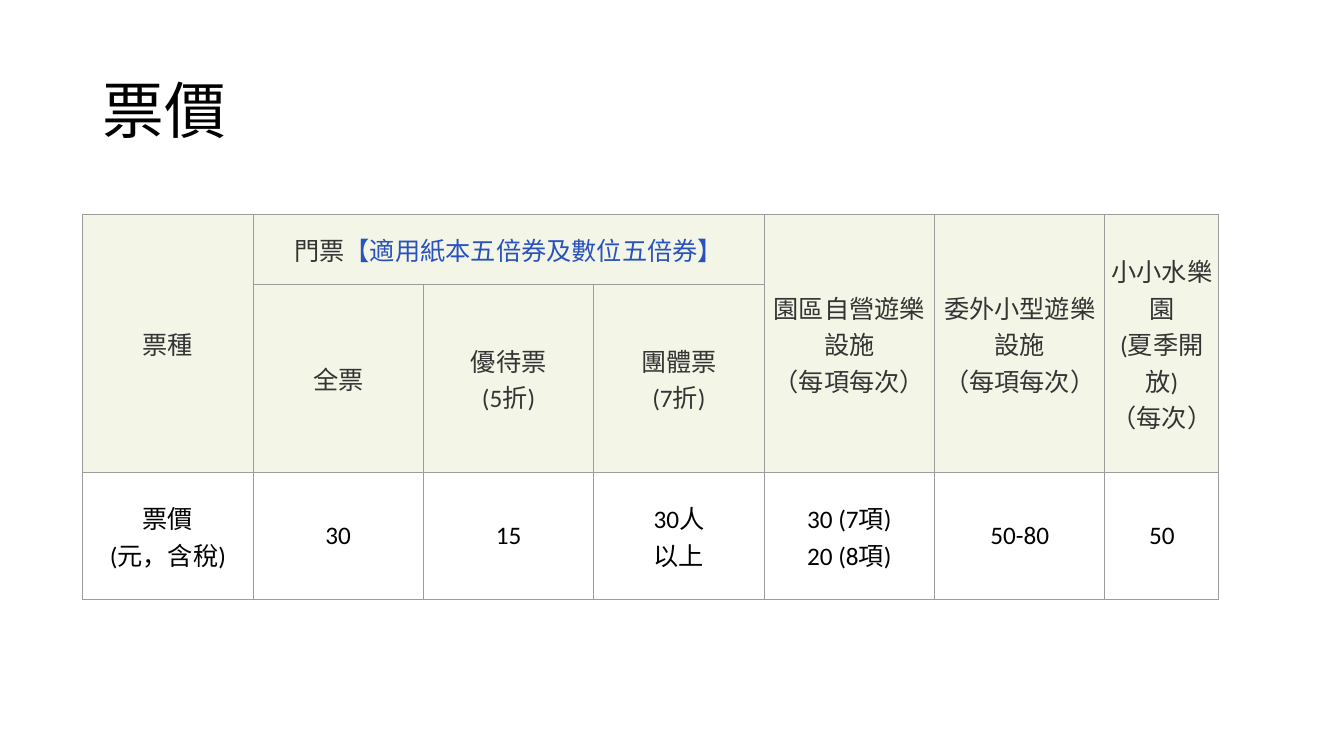
from lxml import etree
from pptx import Presentation
from pptx.dml.color import RGBColor
from pptx.enum.text import MSO_ANCHOR, PP_ALIGN
from pptx.oxml.ns import qn
from pptx.util import Inches, Pt

MIDDLE = MSO_ANCHOR.MIDDLE
LEFT, CENTER = PP_ALIGN.LEFT, PP_ALIGN.CENTER

COLORS = {
    "black": "000000",
    "header_text": "343434",
    "voucher": "2A52BE",
    "header_fill": "F3F6E7",
    "white": "FFFFFF",
    "border": "9C9C9C",
}
COL_WIDTHS = [1.69] * 6 + [1.13]
ROW_HEIGHTS = [0.69, 1.72, 1.26]
HEADER_ROWS = 2
MERGES = [((0, 0), (1, 0)), ((0, 1), (0, 3))] + [((0, c), (1, c)) for c in (4, 5, 6)]
PRICES = [
    ["票種", "門票", "", "", "園區自營遊樂設施\v（每項每次）",
     "委外小型遊樂設施\v（每項每次）", "小小水樂園\v(夏季開放)\v（每次）"],
    ["", "全票", "優待票\v(5折)", "團體票\v(7折)", "", "", ""],
    ["票價\v(元，含稅)", "30", "15", "30人\v以上", "30 (7項)\n20 (8項)", "50-80", "50"],
]


class SlideBuilder:
    """Holds the style and the current slide."""

    def __init__(self, prs):
        self.font = "Calibri"
        self.slide = prs.slides.add_slide(prs.slide_layouts[5])

    def color(self, name):
        return RGBColor.from_string(COLORS[name])

    def style(self, p, size, color, align):
        p.alignment = align
        p.font.name = self.font
        p.font.size = Pt(size)
        p.font.color.rgb = self.color(color)

    def title(self, text, left, top, width, height):
        sp = self.slide.shapes.title
        sp.left, sp.top = Inches(left), Inches(top)
        sp.width, sp.height = Inches(width), Inches(height)
        tf = sp.text_frame
        tf.text = text
        tf.vertical_anchor = MIDDLE
        p = tf.paragraphs[0]
        p.line_spacing = 0.9
        self.style(p, 44, "black", LEFT)

    def borders(self, cell):
        tc_pr = cell._tc.get_or_add_tcPr()
        for side in ("a:lnL", "a:lnR", "a:lnT", "a:lnB"):
            ln = etree.SubElement(tc_pr, qn(side), w=str(Pt(0.75)))
            fill = etree.SubElement(ln, qn("a:solidFill"))
            etree.SubElement(fill, qn("a:srgbClr"), val=COLORS["border"])

    def cell(self, cell, text, fill, color):
        self.borders(cell)
        cell.fill.solid()
        cell.fill.fore_color.rgb = self.color(fill)
        cell.vertical_anchor = MIDDLE
        cell.margin_left = cell.margin_right = Inches(0.03)
        cell.margin_top = cell.margin_bottom = Inches(0.03)
        cell.text_frame.text = text
        for p in cell.text_frame.paragraphs:
            self.style(p, 18, color, CENTER)

    def table(self, rows, left, top):
        table = self.slide.shapes.add_table(
            len(rows), len(COL_WIDTHS), Inches(left), Inches(top),
            Inches(sum(COL_WIDTHS)), Inches(sum(ROW_HEIGHTS))).table
        table.first_row = table.horz_banding = False
        for column, width in zip(table.columns, COL_WIDTHS):
            column.width = Inches(width)
        for row, height in zip(table.rows, ROW_HEIGHTS):
            row.height = Inches(height)
        for r, texts in enumerate(rows):
            header = r < HEADER_ROWS
            fill = "header_fill" if header else "white"
            color = "header_text" if header else "black"
            for c, text in enumerate(texts):
                self.cell(table.cell(r, c), text, fill, color)
        for first, last in MERGES:
            table.cell(*first).merge(table.cell(*last))
        return table

    def add_run(self, cell, text, color):
        r = cell.text_frame.paragraphs[0].add_run()
        r.text = text
        r.font.color.rgb = self.color(color)


def main():
    prs = Presentation()
    prs.slide_width, prs.slide_height = Inches(13.33), Inches(7.5)
    s = SlideBuilder(prs)
    s.title("票價", 0.92, 0.4, 11.5, 1.45)
    table = s.table(PRICES, 0.82, 2.13)
    s.add_run(table.cell(0, 1), "【適用紙本五倍券及數位五倍券】", "voucher")
    prs.save("out.pptx")


if __name__ == "__main__":
    main()
